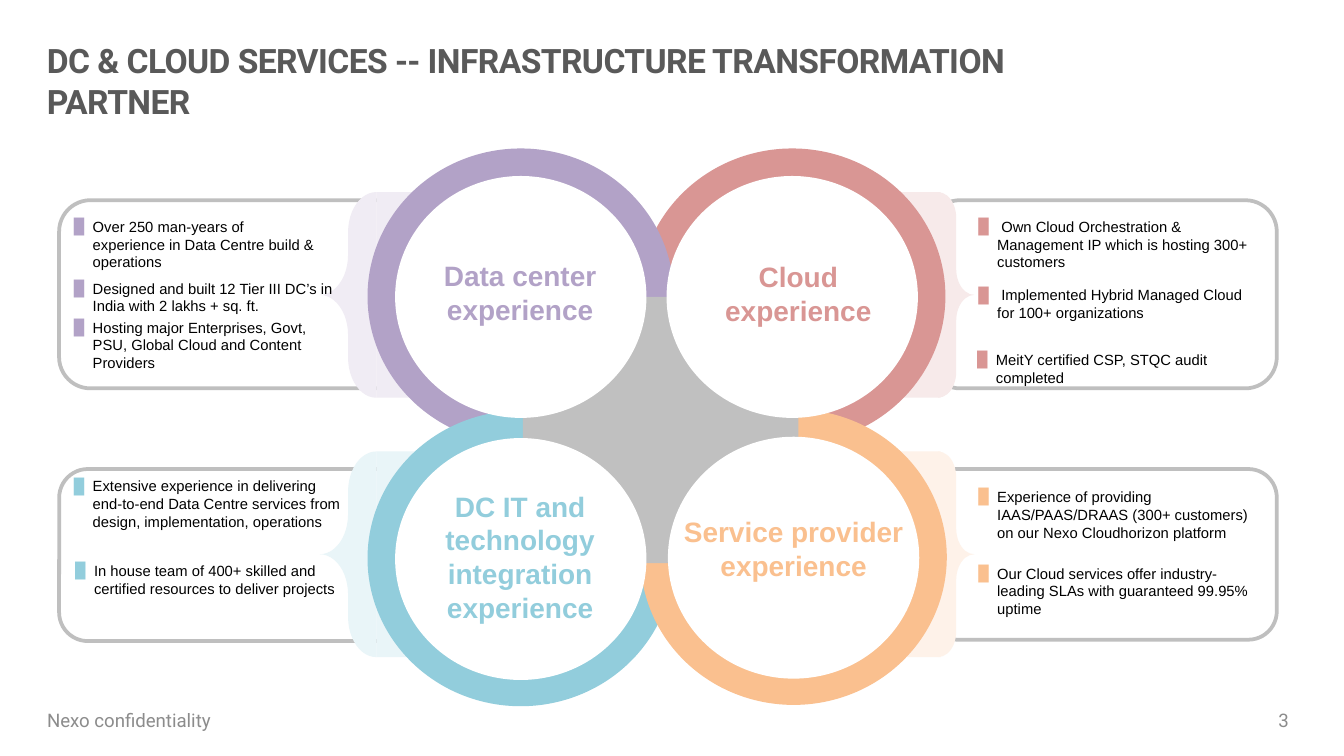
from dataclasses import dataclass

from lxml.etree import SubElement
from pptx import Presentation
from pptx.dml.color import RGBColor
from pptx.enum.shapes import MSO_SHAPE as Preset
from pptx.enum.text import MSO_ANCHOR as Anchor, PP_ALIGN as Align
from pptx.oxml.ns import qn
from pptx.util import Emu, Pt

PX = 9144  # 100 px to the inch
SLIDE_WIDTH = 1000


@dataclass(frozen=True)
class Theme:
    ink: str = "000000"
    title: str = "595959"
    footer: str = "8C8C8C"
    card_line: str = "BFBFBF"
    hub: str = "C0C0C0"
    white: str = "FFFFFF"
    heading_font: str = "Roboto"
    body_font: str = "Arial"
    title_size: float = 18
    label_size: float = 15
    footer_size: float = 10
    bullet_size: float = 7.9
    ring_width: float = 18
    card_width: float = 2


THEME = Theme()
TITLE = "DC & CLOUD SERVICES -- INFRASTRUCTURE TRANSFORMATION PARTNER"
FOOTER = "Nexo confidentiality"
PAGE_NUMBER = "3"

# Stacking order of the rings; boxes are left, top, width, height.
QUADRANTS = [
    dict(side="right", label="Cloud experience", color="D99694", tint="F7EAEA",
         card=(691, 149, 259, 140), bracket_top=143, ring=(488, 123),
         label_box=(514, 159, 160, 118),
         bullets=[
             ((728, 162, 216, 50), " Own Cloud Orchestration & Management IP "
              "which is hosting 300+ customers"),
             ((728, 213, 200, 40),
              " Implemented Hybrid Managed Cloud for 100+ organizations"),
             ((727, 261, 200, 27), "MeitY certified CSP, STQC audit completed"),
         ]),
    dict(side="left", label="Data center experience", color="B2A2C7", tint="F0ECF4",
         card=(44, 149, 267, 140), bracket_top=143, ring=(286, 123),
         label_box=(313, 149, 148, 137),
         bullets=[
             ((55, 162, 183, 53), "Over 250 man-years of experience in "
              "Data Centre build & operations"),
             ((55, 208, 200, 27), "Designed and built 12 Tier III DC’s in "
              "India with 2 lakhs + sq. ft."),
             ((55, 237, 183, 53), "Hosting major Enterprises, Govt, PSU, "
              "Global Cloud and Content Providers"),
         ]),
    dict(side="left", label="DC IT and technology integration experience",
         color="92CDDC", tint="E9F5F8",
         card=(44, 349, 279, 128), bracket_top=336, ring=(286, 318),
         label_box=(300, 355, 174, 118),
         bullets=[
             ((55, 355, 203, 53), "Extensive experience in delivering end-to-end "
              "Data Centre services from design, implementation, operations"),
             ((56, 418, 199, 37), "In house team of 400+ skilled and certified "
              "resources to deliver projects"),
         ]),
    dict(side="right", label="Service provider experience", color="FAC08F", tint="FEF2E9",
         card=(691, 349, 259, 127), bracket_top=336, ring=(489, 317),
         label_box=(503, 349, 175, 118),
         bullets=[
             ((728, 363, 207, 50), "Experience of providing IAAS/PAAS/DRAAS "
              "(300+ customers) on our Nexo Cloudhorizon platform"),
             ((728, 420, 207, 53), "Our Cloud services offer industry-leading "
              "SLAs with guaranteed 99.95% uptime"),
         ]),
]

RING_SIZE = (203, 195)
DISC_SIZE = (187, 180)
DISC_INSET = 8
HUB = (389, 221, 205, 198)
BRACKET_HEIGHT = 153
BRACKETS = {  # left and width of the plate, then of the brace
    "left": ((280, 71), (238, 42), Preset.LEFT_BRACE),
    "right": ((629, 71), (698, 27), Preset.RIGHT_BRACE),
}
BULLET_INDENT = 14


def emu(box):
    return [Emu(length * PX) for length in box]


def rgb(value):
    return RGBColor.from_string(value)


def add_shape(slide, preset, box, fill=None, line=None, width=0):
    shape = slide.shapes.add_shape(preset, *emu(box))
    shape.shadow.inherit = False
    if fill:
        shape.fill.solid()
        shape.fill.fore_color.rgb = rgb(fill)
    else:
        shape.fill.background()
    if line:
        shape.line.color.rgb = rgb(line)
        shape.line.width = Pt(width)
    else:
        shape.line.fill.background()
    return shape


def add_text(slide, box, text, size, color, font, bold=False, align=Align.LEFT,
             anchor=Anchor.MIDDLE, margins=(0, 0, 0, 0), bullet=None):
    """Add a wrapped one-paragraph text box; bullet is the marker's colour."""
    frame = slide.shapes.add_textbox(*emu(box)).text_frame
    frame.word_wrap = True
    frame.vertical_anchor = anchor
    (frame.margin_left, frame.margin_top,
     frame.margin_right, frame.margin_bottom) = emu(margins)
    paragraph = frame.paragraphs[0]
    paragraph.text = text
    paragraph.alignment = align
    if bullet:
        add_bullet(paragraph, bullet)
    paragraph.font.size = Pt(size)
    paragraph.font.name = font
    paragraph.font.bold = bold
    paragraph.font.color.rgb = rgb(color)
    return paragraph


def add_bullet(paragraph, color):
    properties = paragraph._p.get_or_add_pPr()
    properties.set("marL", str(BULLET_INDENT * PX))
    properties.set("indent", str(-BULLET_INDENT * PX))
    marker_color = SubElement(properties, qn("a:buClr"))
    SubElement(marker_color, qn("a:srgbClr"), val=color)
    SubElement(properties, qn("a:buFont"), typeface=THEME.body_font)
    SubElement(properties, qn("a:buChar"), char="█")


def add_bracket(slide, quadrant):
    plate, brace, preset = BRACKETS[quadrant["side"]]
    for (left, width), kind in ((plate, Preset.RECTANGLE), (brace, preset)):
        box = (left, quadrant["bracket_top"], width, BRACKET_HEIGHT)
        part = add_shape(slide, kind, box, quadrant["tint"])
        if kind == preset:
            part.adjustments[0] = 0.71


def main():
    deck = Presentation()
    deck.slide_width = Emu(SLIDE_WIDTH * PX)
    deck.slide_height = Emu(SLIDE_WIDTH * PX * 9 // 16)
    slide = deck.slides.add_slide(deck.slide_layouts[6])

    footer_style = (THEME.footer_size, THEME.footer, THEME.heading_font)
    add_text(slide, (35, 521, 158, 30), FOOTER, *footer_style, margins=(0, 5, 0, 5))
    add_text(slide, (906, 521, 53, 30), PAGE_NUMBER, *footer_style,
             align=Align.RIGHT, margins=(10, 5, 0, 5))
    title = add_text(slide, (35, 40, 824, 40), TITLE, THEME.title_size, THEME.title,
                     THEME.heading_font, bold=True, margins=(0, 5, 10, 5))
    title.runs[0].font._element.set("spc", "-30")

    for quadrant in QUADRANTS:
        add_shape(slide, Preset.ROUNDED_RECTANGLE, quadrant["card"],
                  line=THEME.card_line, width=THEME.card_width)
    for quadrant in QUADRANTS:
        add_bracket(slide, quadrant)
    for quadrant in QUADRANTS:
        add_shape(slide, Preset.OVAL, quadrant["ring"] + RING_SIZE,
                  quadrant["color"], quadrant["color"], THEME.ring_width)
    add_shape(slide, Preset.RECTANGLE, HUB, THEME.hub)

    for quadrant in QUADRANTS:
        left, top = (edge + DISC_INSET for edge in quadrant["ring"])
        add_shape(slide, Preset.OVAL, (left, top) + DISC_SIZE, THEME.white)
    for quadrant in QUADRANTS:
        add_text(slide, quadrant["label_box"], quadrant["label"], THEME.label_size,
                 quadrant["color"], THEME.body_font, bold=True, align=Align.CENTER)
        for box, text in quadrant["bullets"]:
            add_text(slide, box, text, THEME.bullet_size, THEME.ink, THEME.body_font,
                     anchor=Anchor.TOP, bullet=quadrant["color"])

    deck.save("out.pptx")


if __name__ == "__main__":
    main()
